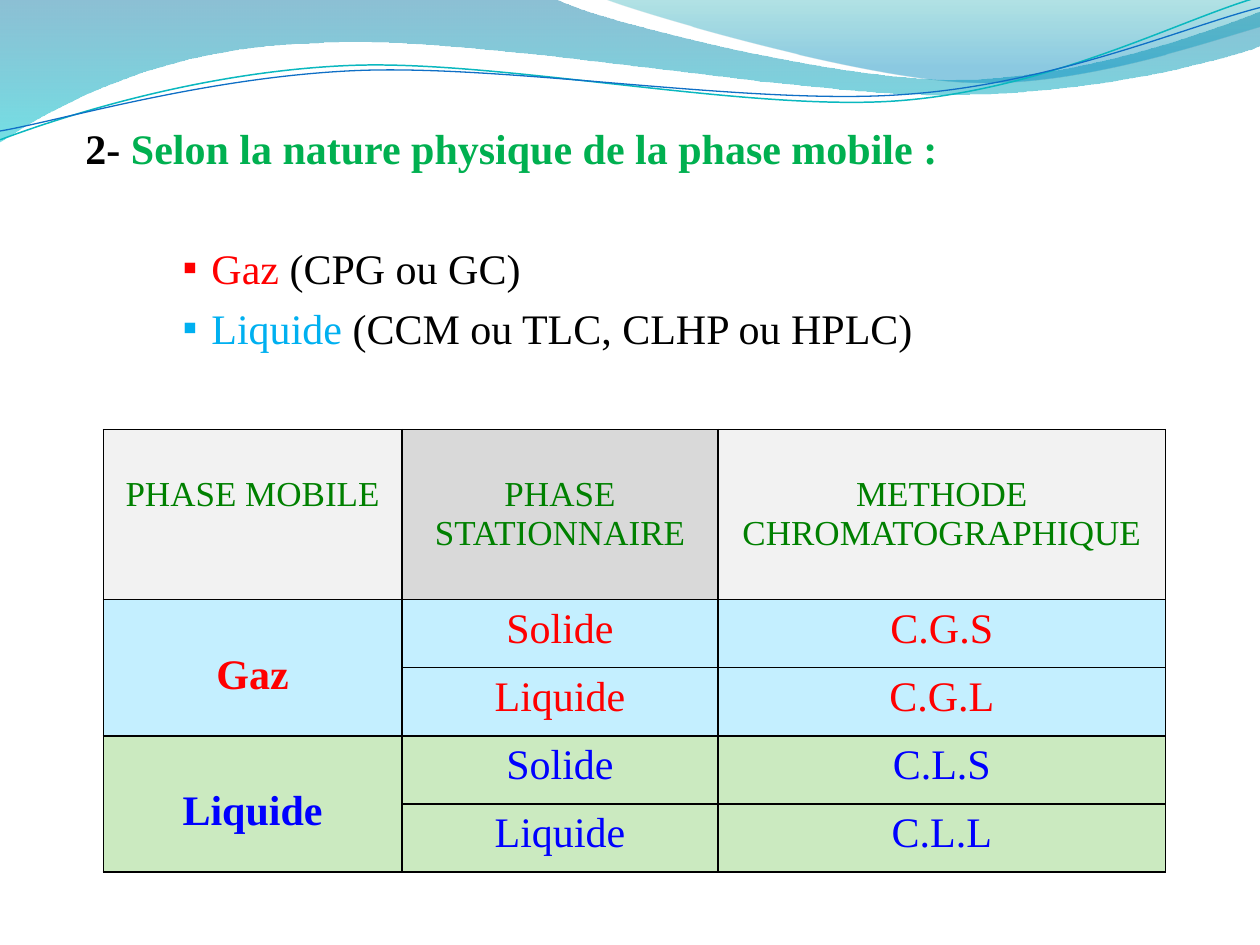
import math

from lxml import etree
from pptx import Presentation
from pptx.dml.color import RGBColor
from pptx.enum import text
from pptx.oxml import ns
from pptx.util import Pt

THEME = {
    "font": "Times New Roman", "body": 24, "header": 20,
    "black": "000000", "title": "00B050", "red": "FF0000", "sky": "00B0F0",
    "header_text": "008000", "blue": "0000FF",
    "light": "F2F2F2", "grey": "D9D9D9", "gas": "C4EFFF", "liquid": "CBEAC0",
}

deck = Presentation()
deck.slide_width, deck.slide_height = 9144000, 6858000
unit = deck.slide_width // 10
page = deck.slides.add_slide(deck.slide_layouts[6])


def style(span, size, color, bold=False):
    span.font.name = THEME["font"]
    span.font.size = Pt(size)
    span.font.bold = bold
    span.font.color.rgb = RGBColor.from_string(THEME[color])


def draw_curve(start, segments, closed, tilt=0, center=(4.99, 0.58)):
    sine, cosine = math.sin(math.radians(tilt)), math.cos(math.radians(tilt))
    groups = []
    for segment in [start] + segments:
        offsets = [(x - center[0], y - center[1]) for x, y in zip(segment[::2], segment[1::2])]
        groups.append([(round((center[0] + x * cosine - y * sine) * unit),
                        round((center[1] + x * sine + y * cosine) * unit)) for x, y in offsets])
    anchors = [group[-1] for group in groups]
    builder = page.shapes.build_freeform(*anchors[0])
    builder.add_line_segments(anchors[1:], close=closed)
    shape = builder.convert_to_shape()
    shape.shadow.inherit = False
    left, top = shape.left, shape.top
    edges = list(shape._element.spPr.iter(ns.qn("a:lnTo")))
    for edge, group in zip(edges, groups[1:]):
        if len(group) == 3:
            bend = etree.Element(ns.qn("a:cubicBezTo"))
            for x, y in group:
                etree.SubElement(bend, ns.qn("a:pt"), x=str(x - left), y=str(y - top))
            edge.getparent().replace(edge, bend)
    shape.rotation = -tilt
    return shape


waves = [
    ((0, 0), [(4.4, -0.01), (4.76, 0.17, 6.64, 0.63, 7.58, 0.63),
              (8.53, 0.63, 9.58, 0.26, 10, 0.09), (10.01, 0.36),
              (9.83, 0.44, 8.7, 0.76, 7.46, 0.75), (6.22, 0.75, 3.82, 0.28, 2.57, 0.34),
              (1.29, 0.36, 0.46, 0.83, -0.01, 1.13)],
     [(0, "0074A1", 45), (1, "00C6CF", 55)]),
    ((4.79, -0.01), [(5.09, 0.11, 6.82, 0.62, 7.69, 0.65),
                     (8.56, 0.69, 9.61, 0.32, 10, 0.21), (10, 0)],
     [(0, "00A1A9", 30), (0.8, "008BBF", 45)]),
]
for start, segments, stops in waves:
    wave = draw_curve(start, segments, True)
    wave.line.fill.background()
    wave.fill.gradient()
    wave.fill.gradient_angle = 270
    for stop, (position, color, opacity) in zip(wave.fill.gradient_stops, stops):
        stop.position = position
        stop.color.rgb = RGBColor.from_string(color)
    colors = wave._element.spPr.iter(ns.qn("a:srgbClr"))
    for color, (_, _, opacity) in zip(colors, stops):
        etree.SubElement(color, ns.qn("a:alpha"), val=str(opacity * 1000))

threads = [
    ((0, 1.11), [(0.48, 0.93, 1.58, 0.57, 2.77, 0.52), (3.95, 0.47, 5.93, 0.89, 7.13, 0.8),
                 (8.33, 0.71, 9.38, 0.15, 9.98, -0.02)], "0AB8BF", 0.85),
    ((0, 1.04), [(0.47, 0.96, 1.64, 0.61, 2.83, 0.56), (4.03, 0.51, 5.97, 0.84, 7.17, 0.75),
                 (8.36, 0.67, 9.41, 0.21, 10, 0.06)], "0F6FC6", 0.75),
]
for start, segments, color, width in threads:
    thread = draw_curve(start, segments, False, tilt=2.7)
    thread.fill.background()
    thread.line.color.rgb = RGBColor.from_string(color)
    thread.line.width = Pt(width)

widths = [2.37, 2.51, 3.55]
heights = [1.35] + [0.54] * 4
frame = page.shapes.add_table(5, 3, *(round(n * unit) for n in
                                      (0.82, 3.41, sum(widths), sum(heights))))
table = frame.table
for column, width in zip(table.columns, widths):
    column.width = round(width * unit)
for row, height in zip(table.rows, heights):
    row.height = round(height * unit)

rows = [
    ["PHASE MOBILE", "PHASE STATIONNAIRE", "METHODE CHROMATOGRAPHIQUE"],
    ["Gaz", "Solide", "C.G.S"],
    ["", "Liquide", "C.G.L"],
    ["Liquide", "Solide", "C.L.S"],
    ["", "Liquide", "C.L.L"],
]
for r, labels in enumerate(rows):
    for c, label in enumerate(labels):
        cell = table.cell(r, c)
        properties = cell._tc.get_or_add_tcPr()
        for side in ("lnL", "lnR", "lnT", "lnB"):
            border = etree.SubElement(properties, ns.qn(f"a:{side}"), w=str(Pt(1)))
            fill = etree.SubElement(border, ns.qn("a:solidFill"))
            etree.SubElement(fill, ns.qn("a:srgbClr"), val=THEME["black"])
        if r == 0:
            background, color, size = ("light", "grey", "light")[c], "header_text", "header"
            cell.margin_top = round(0.36 * unit)
        else:
            background, color = ("gas", "red") if r < 3 else ("liquid", "blue")
            size = "body"
        cell.fill.solid()
        cell.fill.fore_color.rgb = RGBColor.from_string(THEME[background])
        if not label:
            continue
        cell.text_frame.text = label
        para = cell.text_frame.paragraphs[0]
        para.alignment = text.PP_ALIGN.CENTER
        group = r > 0 and c == 0
        if group:
            para.line_spacing = 2.0
        style(para.runs[0], THEME[size], color, bold=group)
for r in (1, 3):
    table.cell(r, 0).merge(table.cell(r + 1, 0))

box = page.shapes.add_textbox(*(round(n * unit) for n in (0.58, 0.84, 8.58, 2.04)))
box.text_frame.word_wrap = True
lines = [
    [("2- ", "black"), ("Selon la nature physique de la phase mobile :", "title")],
    [("Gaz ", "red"), ("(CPG ou GC)", "black")],
    [("Liquide ", "sky"), ("(CCM ou TLC, CLHP ou HPLC)", "black")],
]
for index, line in enumerate(lines):
    para = box.text_frame.paragraphs[0] if index == 0 else box.text_frame.add_paragraph()
    para.line_spacing = 1.2
    for words, color in line:
        span = para.add_run()
        span.text = words
        style(span, THEME["body"], color, bold=index == 0)
    if index == 0:
        para.space_after = Pt(34)
        continue
    para.level = 2
    properties = para._p.get_or_add_pPr()
    properties.set("marL", str(unit))
    properties.set("indent", str(round(-0.23 * unit)))
    etree.SubElement(properties, ns.qn("a:buFont"), typeface=THEME["font"])
    etree.SubElement(properties, ns.qn("a:buChar"), char="▪")

deck.save("out.pptx")
